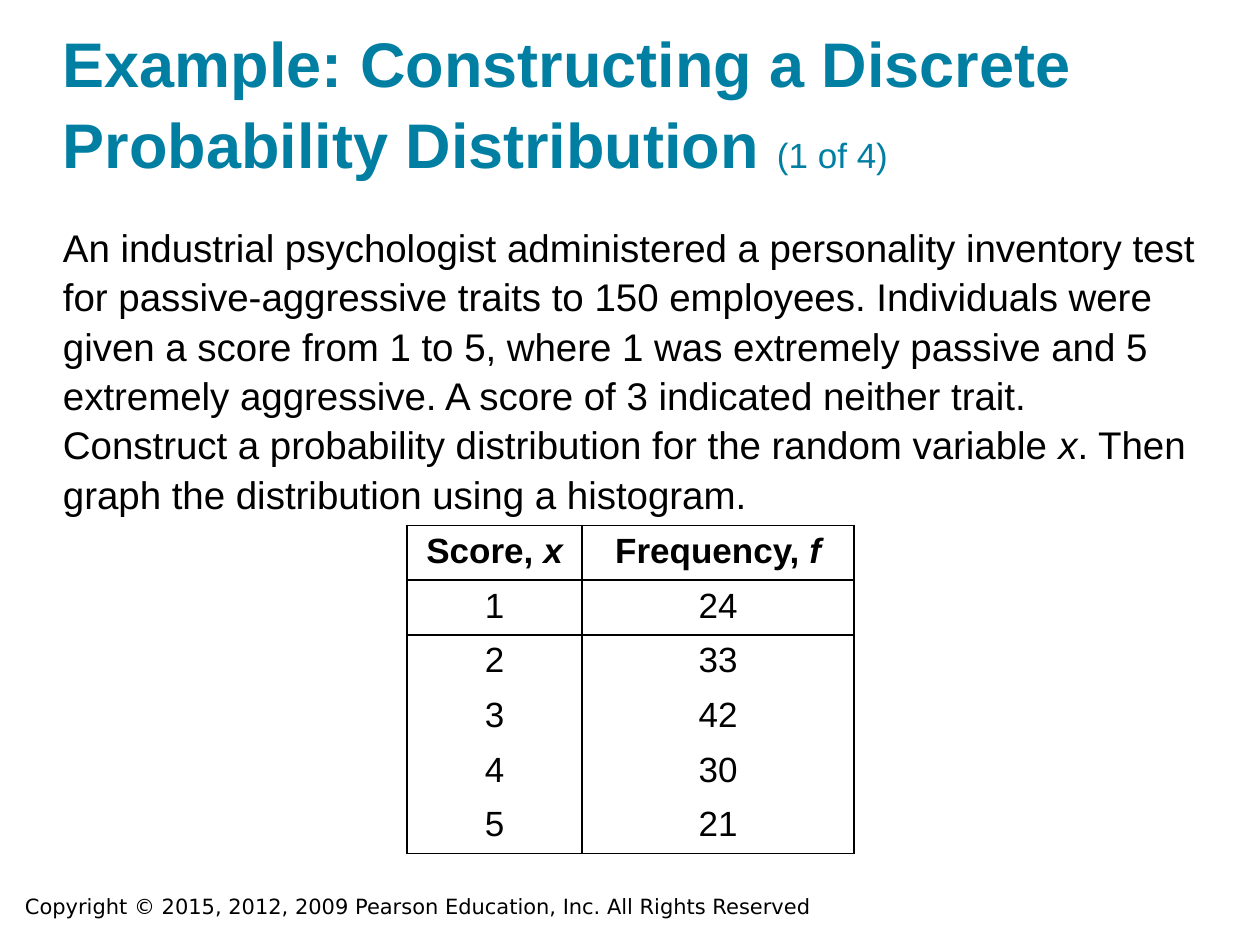
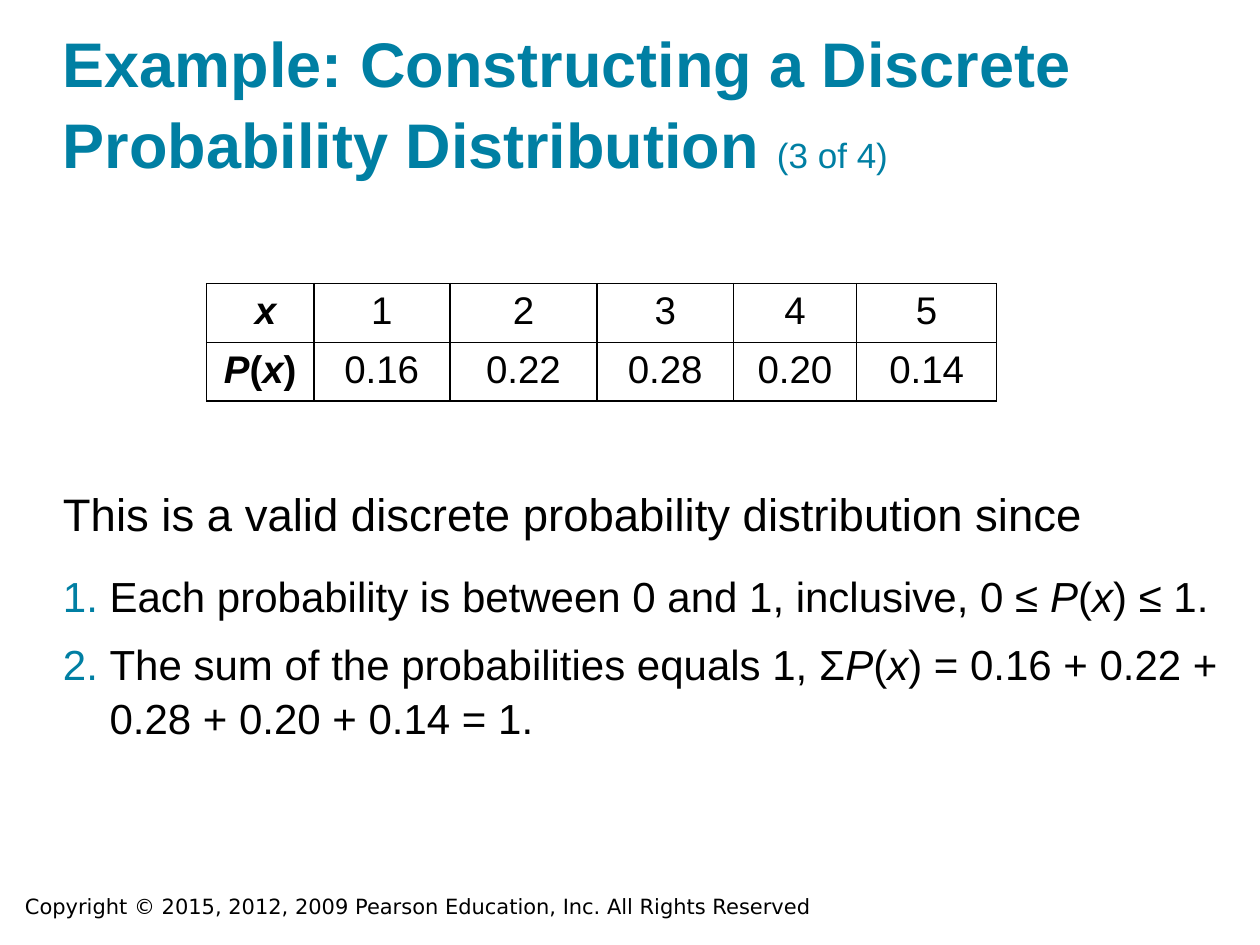
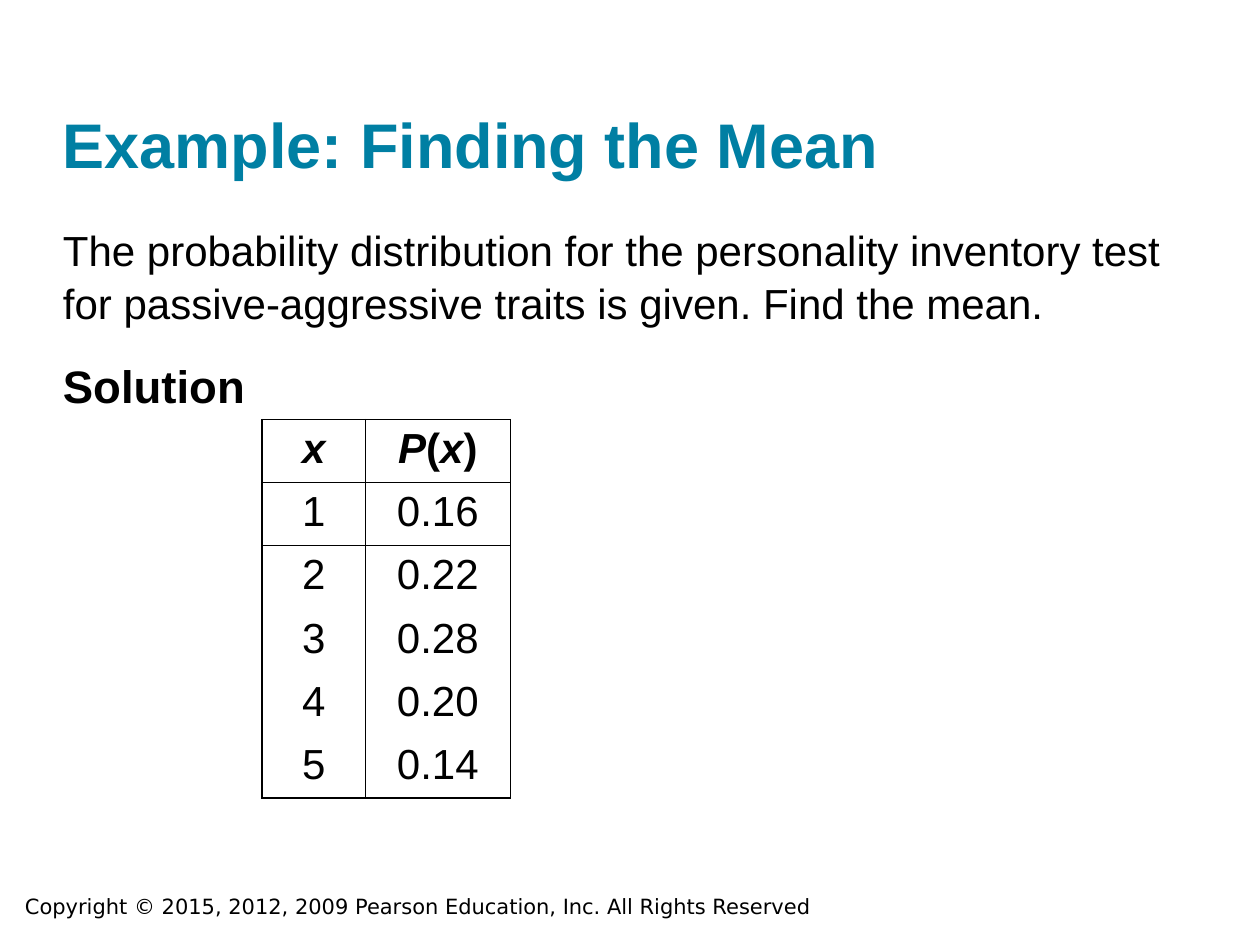
from lxml.etree import SubElement
from pptx import Presentation
from pptx.dml.color import RGBColor as RGB
from pptx.enum.text import MSO_ANCHOR as ANCHOR, MSO_AUTO_SIZE as AUTO, PP_ALIGN as ALIGN
from pptx.oxml.ns import qn
from pptx.util import Inches, Pt

COLORS = {"paper": "FFFFFF", "ink": "000000", "teal": "007FA3"}
FONT = "Arial"
LEADING = 1.07
TITLE_BOX = (0.5, 0.24, 9, 1.2)
FOOT_BOX = (0.1, 7.04, 7.83, 0.3)
NOTICE = "Copyright © 2015, 2012, 2009 Pearson Education, Inc. All Rights Reserved"
DISCRETE = "Example: Constructing a Discrete Probability Distribution "
ODDS = ["0.16", "0.22", "0.28", "0.20", "0.14"]
SCORES = ["1", "2", "3", "4", "5"]


def add_run(para, text, size, color="ink", bold=False, italic=False, face=FONT):
    run = para.add_run()
    run.text = text
    font = run.font
    font.name, font.size = face, Pt(size)
    font.bold, font.italic = bold, italic
    font.color.rgb = RGB.from_string(COLORS[color])


def add_rich(para, text, size, bold=False):
    """Add text in which *stars* enclose the italic parts."""
    for i, part in enumerate(text.split("*")):
        if part:
            add_run(para, part, size, bold=bold, italic=i % 2 == 1)


def add_box(slide, box, inset=0):
    frame = slide.shapes.add_textbox(*map(Inches, box)).text_frame
    frame.word_wrap = True
    if inset == 0:
        frame.margin_left = frame.margin_right = 0
        frame.margin_top = frame.margin_bottom = 0
    return frame


def add_title(slide, text, part):
    frame = add_box(slide, TITLE_BOX)
    frame.vertical_anchor = ANCHOR.BOTTOM
    para = frame.paragraphs[0]
    para.line_spacing = LEADING
    add_run(para, text, 36, "teal", bold=True)
    if part:
        add_run(para, part, 20, "teal")


def add_foot(slide):
    frame = add_box(slide, FOOT_BOX, inset=None)
    frame.auto_size = AUTO.SHAPE_TO_FIT_TEXT
    add_run(frame.paragraphs[0], NOTICE, 12, face="DejaVu Sans")


def number(para, indent=0.37):
    """Give the paragraph a teal automatic number."""
    props = para._p.get_or_add_pPr()
    props.set("marL", str(Inches(indent)))
    props.set("indent", str(-Inches(indent)))
    tint = SubElement(props, qn("a:buClr"))
    SubElement(tint, qn("a:srgbClr"), val=COLORS["teal"])
    SubElement(props, qn("a:buFont"), typeface="+mj-lt")
    SubElement(props, qn("a:buAutoNum"), type="arabicPeriod")


def add_body(slide, box, items):
    """Each item is text, size and options: bold, listed, gap."""
    frame = add_box(slide, box)
    for i, (text, size, opts) in enumerate(items):
        para = frame.add_paragraph() if i else frame.paragraphs[0]
        para.line_spacing = LEADING
        if i:
            para.space_before = Pt(opts.get("gap", 15))
        if opts.get("listed"):
            number(para)
        add_rich(para, text, size, opts.get("bold", False))


def set_edge(cell, side, shown):
    line = SubElement(cell._tc.get_or_add_tcPr(), qn("a:ln" + side), w=str(Pt(1)))
    if shown:
        fill = SubElement(line, qn("a:solidFill"))
        SubElement(fill, qn("a:srgbClr"), val=COLORS["ink"])
    else:
        SubElement(line, qn("a:noFill"))


def add_grid(slide, spot, widths, height, rows, size, is_head):
    """Draw all upright lines, and level lines around the first two rows and at the end."""
    last = len(rows) - 1
    shape = slide.shapes.add_table(
        len(rows), len(widths), *map(Inches, (*spot, sum(widths), height * len(rows))))
    table = shape.table
    table.first_row = table.horz_banding = False
    for col, width in zip(table.columns, widths):
        col.width = Inches(width)
    for r, row in enumerate(rows):
        table.rows[r].height = Inches(height)
        for c, text in enumerate(row):
            cell = table.cell(r, c)
            para = cell.text_frame.paragraphs[0]
            para.alignment = ALIGN.CENTER
            add_rich(para, text, size, bold=is_head(r, c))
            edges = {"L": True, "R": True, "T": r <= 2, "B": r < 2 or r == last}
            for side, shown in edges.items():
                set_edge(cell, side, shown)
            cell.fill.background()


def top_row(r, c):
    return r == 0


def left_col(r, c):
    return c == 0


def add_slide(deck, title, part=""):
    slide = deck.slides.add_slide(deck.slide_layouts[6])
    fill = slide.background.fill
    fill.solid()
    fill.fore_color.rgb = RGB.from_string(COLORS["paper"])
    add_foot(slide)
    add_title(slide, title, part)
    return slide


def add_task(deck):
    slide = add_slide(deck, DISCRETE, "(1 of 4)")
    add_body(slide, (0.5, 1.75, 9, 2.25), [
        ("An industrial psychologist administered a personality inventory test for "
         "passive-aggressive traits to 150 employees. Individuals were given a score "
         "from 1 to 5, where 1 was extremely passive and 5 extremely aggressive. A score "
         "of 3 indicated neither trait. Construct a probability distribution for the "
         "random variable *x*. Then graph the distribution using a histogram.", 22, {})])
    counts = ["24", "33", "42", "30", "21"]
    rows = [("Score, *x*", "Frequency, *f*"), *zip(SCORES, counts)]
    add_grid(slide, (3.23, 4.17), [1.39, 2.16], 0.41, rows, 20, top_row)


def add_check(deck):
    slide = add_slide(deck, DISCRETE, "(3 of 4)")
    add_body(slide, (0.5, 3.83, 9.17, 2.53), [
        ("This is a valid discrete probability distribution since", 26, {}),
        ("Each probability is between 0 and 1, inclusive, 0 ≤ *P*(*x*) ≤ 1.", 24,
         {"listed": True}),
        ("The sum of the probabilities equals 1, Σ*P*(*x*) = 0.16 + 0.22 + 0.28 + "
         "0.20 + 0.14 = 1.", 24, {"listed": True, "gap": 8})])
    rows = [["* x*", *SCORES], ["*P*(*x*)", *ODDS]]
    widths = [0.85, 1.08, 1.17, 1.08, 0.98, 1.11]
    add_grid(slide, (1.64, 2.25), widths, 0.44, rows, 22, left_col)


def add_mean(deck):
    slide = add_slide(deck, "Example: Finding the Mean")
    add_body(slide, (0.5, 1.75, 9, 1.42), [
        ("The probability distribution for the personality inventory test for "
         "passive-aggressive traits is given. Find the mean.", 24, {}),
        ("Solution", 26, {"bold": True})])
    rows = [("*x*", "*P*(*x*)"), *zip(SCORES, ODDS)]
    add_grid(slide, (2.08, 3.33), [0.82, 1.15], 0.47, rows, 24, top_row)


def main():
    deck = Presentation()
    deck.slide_width, deck.slide_height = Inches(10), Inches(7.5)
    add_task(deck)
    add_check(deck)
    add_mean(deck)
    deck.save("out.pptx")


if __name__ == "__main__":
    main()
